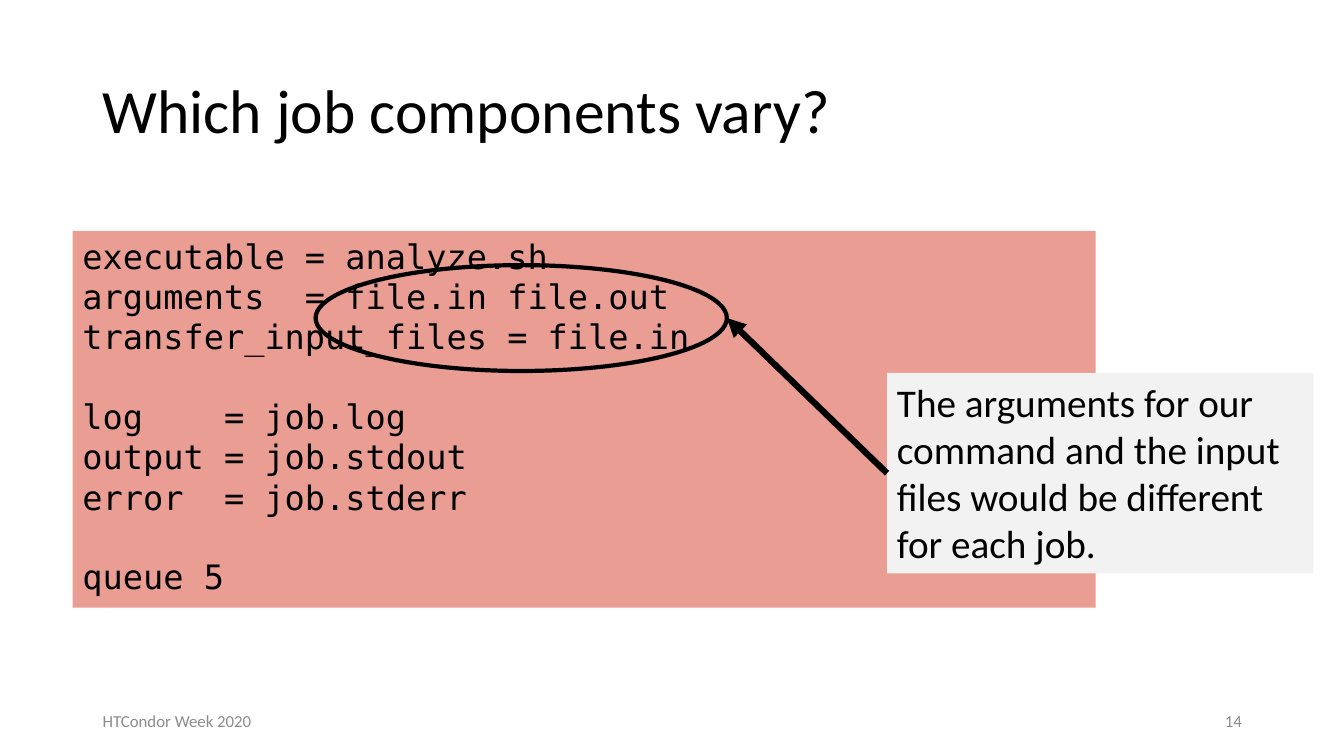
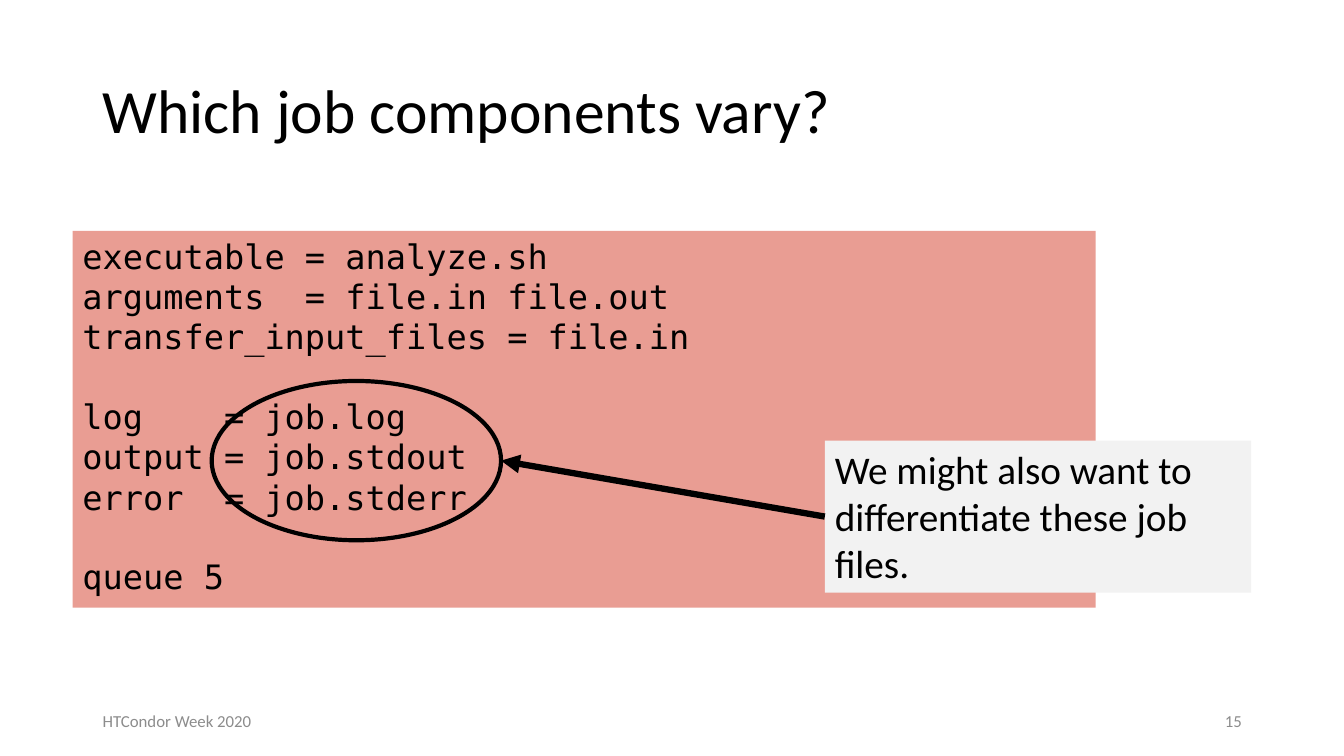
from pptx import Presentation
from pptx.dml.color import RGBColor
from pptx.enum.shapes import MSO_CONNECTOR, MSO_SHAPE
from pptx.enum.text import MSO_ANCHOR, PP_ALIGN
from pptx.oxml.ns import qn
from pptx.util import Inches, Pt
from lxml import etree

TOP, MIDDLE = MSO_ANCHOR.TOP, MSO_ANCHOR.MIDDLE
LEFT, RIGHT = PP_ALIGN.LEFT, PP_ALIGN.RIGHT
STRAIGHT, OVAL = MSO_CONNECTOR.STRAIGHT, MSO_SHAPE.OVAL
LEFT_SIDE = 1

COLORS = {"text": "000000", "code": "E99D93", "note": "F2F2F2", "footer": "8C8C8C"}
BODY_FONT, CODE_FONT = "Calibri", "DejaVu Sans Mono"
CODE_LINE = Pt(28)

TITLE = "Which job components vary?"
FOOTER = "HTCondor Week 2020"
CODE_GROUPS = [
    ["executable = analyze.sh",
     "arguments  = file.in file.out",
     "transfer_input_files = file.in"],
    ["log    = job.log",
     "output = job.stdout",
     "error  = job.stderr"],
    ["queue 5"],
]
CODE_LINES = [line for group in CODE_GROUPS for line in group]
GROUP_STARTS = [len(CODE_GROUPS[0]), len(CODE_GROUPS[0] + CODE_GROUPS[1])]

TITLE_AREA = (6.9, 5.33, 86.25, 19.33)
CODE_AREA = (5.4, 30.53, 76.13, 49.87)
FOOTER_AREA = (6.9, 92.67, 22.5, 5.33)
NUMBER_AREA = (70.65, 92.67, 22.5, 5.33)
NOTE_WIDTH = 31.73

SLIDES = [
    {"number": "14",
     "ellipse": (23.48, 35.07, 30.6, 14),
     "note": "The arguments for our command and the input files would be different for each job.",
     "note_area": (66, 49.33, NOTE_WIDTH, 26.53)},
    {"number": "15",
     "ellipse": (15.75, 50.4, 21.53, 21.07),
     "note": "We might also want to differentiate these job files.",
     "note_area": (61.37, 58.27, NOTE_WIDTH, 20.13)},
]

presentation = Presentation()
presentation.slide_width = Inches(13.33)
presentation.slide_height = Inches(7.5)
column = presentation.slide_width / 100
row = presentation.slide_height / 100
blank_layout = presentation.slide_layouts[6]


def to_lengths(area):
    left, top, width, height = area
    return int(left * column), int(top * row), int(width * column), int(height * row)


def add_text(slide, lines, area, size, font=BODY_FONT, color="text", fill=None,
             anchor=MIDDLE, align=LEFT):
    shape = slide.shapes.add_textbox(*to_lengths(area))
    if fill:
        shape.fill.solid()
        shape.fill.fore_color.rgb = RGBColor.from_string(COLORS[fill])
    frame = shape.text_frame
    frame.word_wrap = True
    frame.vertical_anchor = anchor
    frame.text = "\n".join(lines)
    for paragraph in frame.paragraphs:
        paragraph.alignment = align
        paragraph.font.name = font
        paragraph.font.size = Pt(size)
        paragraph.font.color.rgb = RGBColor.from_string(COLORS[color])
    return shape


for content in SLIDES:
    slide = presentation.slides.add_slide(blank_layout)

    code = add_text(slide, CODE_LINES, CODE_AREA, 24, CODE_FONT, fill="code", anchor=TOP)
    for start in GROUP_STARTS:
        code.text_frame.paragraphs[start].space_before = CODE_LINE

    title = add_text(slide, [TITLE], TITLE_AREA, 44)
    title.text_frame.paragraphs[0].line_spacing = 0.9

    ellipse = slide.shapes.add_shape(OVAL, *to_lengths(content["ellipse"]))
    ellipse.shadow.inherit = False
    ellipse.fill.background()
    ellipse.line.color.rgb = RGBColor.from_string(COLORS["text"])
    ellipse.line.width = Pt(3)

    note = add_text(slide, [content["note"]], content["note_area"], 28, fill="note", anchor=TOP)

    arrow = slide.shapes.add_connector(
        STRAIGHT, note.left, note.top + note.height // 2,
        ellipse.left + ellipse.width, ellipse.top + ellipse.height // 2)
    arrow.begin_connect(note, LEFT_SIDE)
    arrow.line.color.rgb = RGBColor.from_string(COLORS["text"])
    arrow.line.width = Pt(4.5)
    etree.SubElement(arrow.line._get_or_add_ln(), qn("a:tailEnd"), type="triangle")
    etree.SubElement(arrow._element.spPr, qn("a:effectLst"))

    add_text(slide, [FOOTER], FOOTER_AREA, 12, color="footer")
    add_text(slide, [content["number"]], NUMBER_AREA, 12, color="footer", align=RIGHT)

presentation.save("out.pptx")
